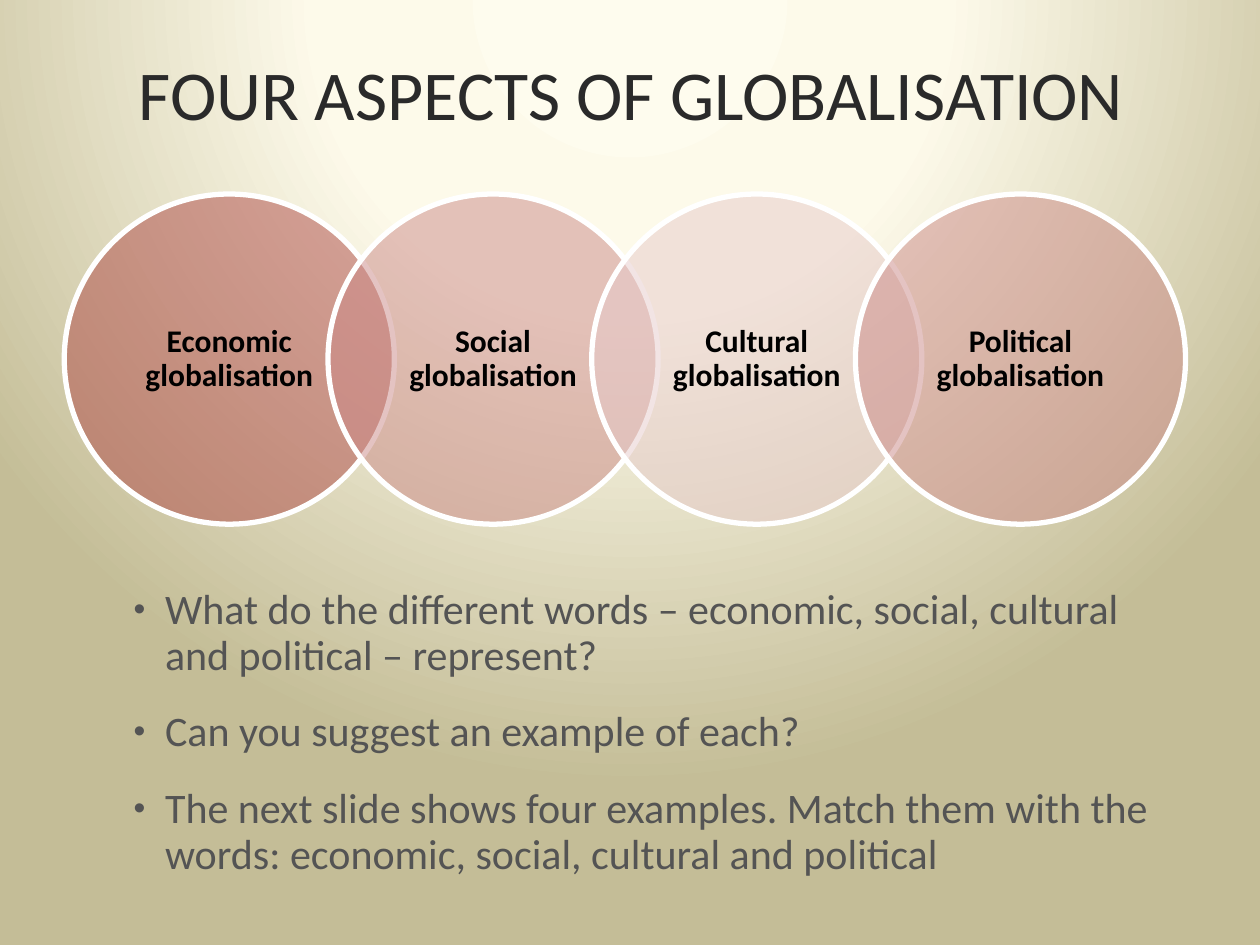
from lxml import etree
from pptx import Presentation
from pptx import util as u
from pptx.dml.color import RGBColor
from pptx.enum import shapes, text
from pptx.oxml import parse_xml
from pptx.oxml.ns import nsdecls, qn

TITLE = "FOUR ASPECTS OF GLOBALISATION"
QUESTIONS = [
    "What do the different words – economic, social, cultural and political – represent?",
    "Can you suggest an example of each?",
    "The next slide shows four examples. Match them with the words: "
    "economic, social, cultural and political",
]

CHARCOAL = RGBColor(0x2A, 0x2A, 0x2A)
GREY = RGBColor(0x54, 0x54, 0x54)
BLACK = RGBColor(0, 0, 0)
WHITE = RGBColor(0xFF, 0xFF, 0xFF)
BRICK = RGBColor(0xAE, 0x49, 0x46)
ROSE = RGBColor(0xCB, 0x89, 0x87)
BLUSH = RGBColor(0xE6, 0xCA, 0xCA)
GRADIENT = [(0, "FEFCEE"), (40, "FDFAEA"), (100, "C4BD97")]

ASPECTS = [
    ("Economic globalisation", BRICK),
    ("Social globalisation", ROSE),
    ("Cultural globalisation", BLUSH),
    ("Political globalisation", ROSE),
]
CIRCLE_LEFT, CIRCLE_TOP, CIRCLE_SIZE, CIRCLE_PITCH = 0.51, 1.54, 2.62, 2.093

TITLE_FONT = {"name": "Calibri", "size": u.Pt(40), "bold": False}
BODY_FONT = {"name": "Calibri", "size": u.Pt(24), "bold": False}
LABEL_FONT = {"name": "Calibri", "size": u.Pt(18), "bold": True}
TITLE_FRAME = {"vertical_anchor": text.MSO_ANCHOR.TOP, "margin_top": u.Inches(0.18)}
BODY_FRAME = {"vertical_anchor": text.MSO_ANCHOR.TOP}
LABEL_FRAME = {
    "vertical_anchor": text.MSO_ANCHOR.MIDDLE,
    "margin_left": u.Inches(0.14), "margin_right": u.Inches(0.14),
    "margin_top": u.Inches(0.03), "margin_bottom": u.Inches(0.03),
}
LEFT_PARA = {"alignment": text.PP_ALIGN.LEFT, "line_spacing": 0.9}
BODY_PARA = {**LEFT_PARA, "space_before": u.Pt(18)}
LABEL_PARA = {"alignment": text.PP_ALIGN.CENTER, "line_spacing": 0.9}


def apply(target, values):
    for name, value in values.items():
        setattr(target, name, value)


def place(box, left, top, width, height):
    apply(box, {"left": u.Inches(left), "top": u.Inches(top),
                "width": u.Inches(width), "height": u.Inches(height)})


def write(box, lines, frame_values, para_values, font_values, color):
    frame = box.text_frame
    apply(frame, {"word_wrap": True, "auto_size": text.MSO_AUTO_SIZE.NONE, **frame_values})
    for index, line in enumerate(lines):
        para = frame.add_paragraph() if index else frame.paragraphs[0]
        apply(para, para_values)
        span = para.add_run()
        span.text = line
        apply(span.font, font_values)
        span.font.color.rgb = color


def add_bullet(para):
    properties = para._p.get_or_add_pPr()
    properties.set("marL", str(u.Inches(0.3)))
    properties.set("indent", str(u.Inches(-0.25)))
    color = etree.SubElement(properties, qn("a:buClr"))
    etree.SubElement(color, qn("a:srgbClr"), val=str(GREY))
    etree.SubElement(properties, qn("a:buSzPct"), val="80000")
    etree.SubElement(properties, qn("a:buFont"), typeface="Arial")
    etree.SubElement(properties, qn("a:buChar"), char="•")


def paint_background(page):
    stops = "".join(
        f'<a:gs pos="{position * 1000}"><a:srgbClr val="{color}"/></a:gs>'
        for position, color in GRADIENT
    )
    background = parse_xml(
        f'<p:bg {nsdecls("p", "a")}><p:bgPr><a:gradFill rotWithShape="1">'
        f'<a:gsLst>{stops}</a:gsLst><a:path path="circle">'
        '<a:fillToRect l="50000" t="-80000" r="50000" b="180000"/></a:path>'
        '</a:gradFill><a:effectLst/></p:bgPr></p:bg>'
    )
    page.element.cSld.insert(0, background)


def add_circle(group, index, label, color):
    circle = group.shapes.add_shape(
        shapes.MSO_SHAPE.OVAL,
        u.Inches(CIRCLE_LEFT + index * CIRCLE_PITCH), u.Inches(CIRCLE_TOP),
        u.Inches(CIRCLE_SIZE), u.Inches(CIRCLE_SIZE),
    )
    circle.shadow.inherit = False
    circle.fill.solid()
    circle.fill.fore_color.rgb = color
    fill_color = circle._element.spPr.find(qn("a:solidFill")).find(qn("a:srgbClr"))
    etree.SubElement(fill_color, qn("a:alpha"), val="50000")
    circle.line.color.rgb = WHITE
    circle.line.width = u.Pt(3)
    write(circle, [label], LABEL_FRAME, LABEL_PARA, LABEL_FONT, BLACK)


def main():
    deck = Presentation()
    deck.slide_width, deck.slide_height = u.Inches(10), u.Inches(7.5)
    page = deck.slides.add_slide(deck.slide_layouts[1])
    paint_background(page)

    title, body = page.placeholders
    place(title, 1, 0.3, 8.65, 1.45)
    write(title, [TITLE], TITLE_FRAME, LEFT_PARA, TITLE_FONT, CHARCOAL)
    place(body, 0.91, 4.62, 8.58, 2.7)
    write(body, QUESTIONS, BODY_FRAME, BODY_PARA, BODY_FONT, GREY)
    for para in body.text_frame.paragraphs:
        add_bullet(para)

    group = page.shapes.add_group_shape()
    for index, (label, color) in enumerate(ASPECTS):
        add_circle(group, index, label, color)

    deck.save("out.pptx")


if __name__ == "__main__":
    main()
